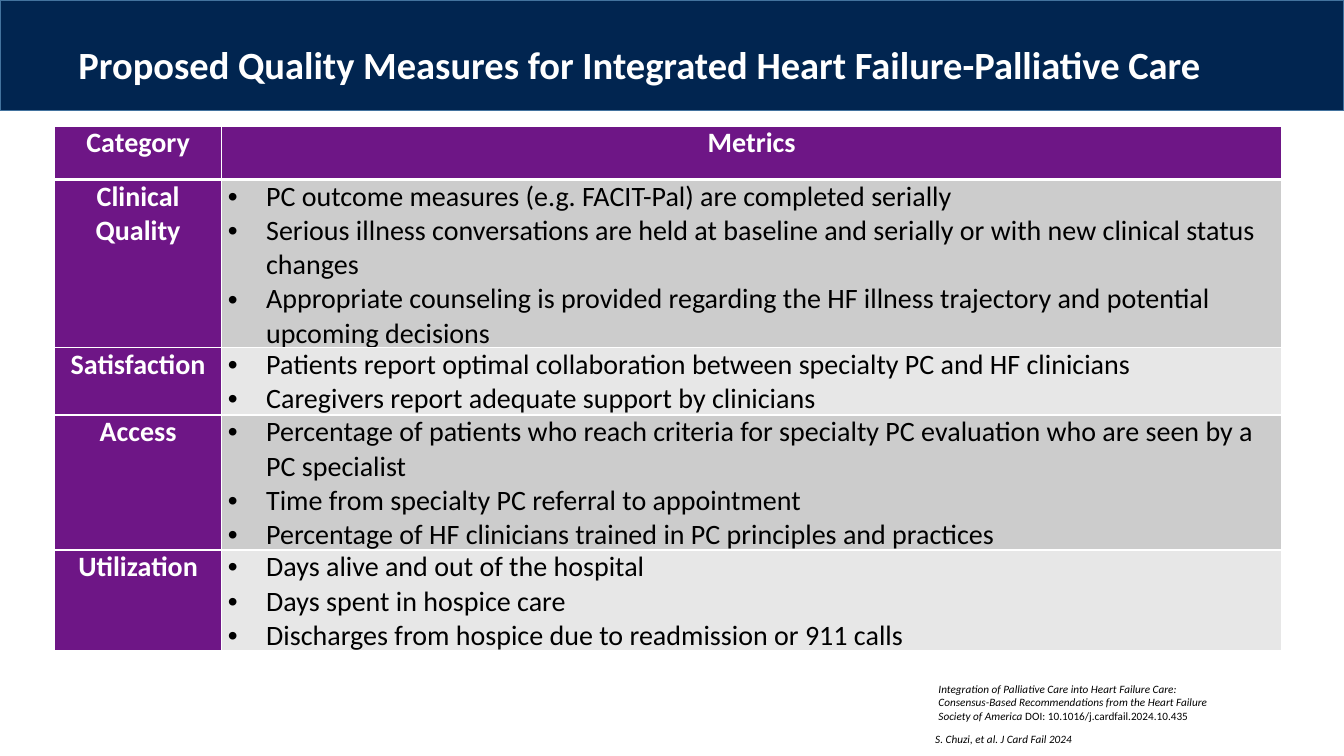
from lxml.etree import SubElement
from pptx import Presentation
from pptx.dml.color import RGBColor
from pptx.enum.shapes import MSO_SHAPE
from pptx.enum.text import MSO_ANCHOR, PP_ALIGN
from pptx.oxml.ns import qn
from pptx.util import Inches, Pt

COLORS = {
    "navy": "012550", "navy_edge": "43739E", "purple": "6E1686",
    "dark_band": "CCCCCC", "light_band": "E7E7E7",
    "white": "FFFFFF", "black": "000000",
}
MEASURES = [
    ("Clinical Quality", 1.66, [
        "PC outcome measures (e.g. FACIT-Pal) are completed serially",
        "Serious illness conversations are held at baseline and serially or with new clinical status changes",
        "Appropriate counseling is provided regarding the HF illness trajectory and potential upcoming decisions",
    ]),
    ("Satisfaction", 0.67, [
        "Patients report optimal collaboration between specialty PC and HF clinicians",
        "Caregivers report adequate support by clinicians",
    ]),
    ("Access", 1.34, [
        "Percentage of patients who reach criteria for specialty PC evaluation who are seen by a PC specialist",
        "Time from specialty PC referral to appointment",
        "Percentage of HF clinicians trained in PC principles and practices",
    ]),
    ("Utilization", 1.0, [
        "Days alive and out of the hospital",
        "Days spent in hospice care",
        "Discharges from hospice due to readmission or 911 calls",
    ]),
]


def style(paragraph, size, color, bold=False, italic=None):
    font = paragraph.font
    font.name, font.size, font.bold, font.italic = "Calibri", Pt(size), bold, italic
    font.color.rgb = RGBColor.from_string(COLORS[color])


def fill_cell(cell, lines, fill, is_header_row, is_label):
    """Write the lines, bulleted unless a label, with white borders and a fill."""
    cell.margin_left = cell.margin_right = Inches(0.06)
    cell.margin_top = cell.margin_bottom = 0
    cell.text = "\n".join(lines)
    for paragraph in cell.text_frame.paragraphs:
        if is_label:
            paragraph.alignment = PP_ALIGN.CENTER
            style(paragraph, 20, "white", bold=True)
            continue
        properties = paragraph._p.get_or_add_pPr()
        properties.set("marL", str(Inches(0.38)))
        properties.set("indent", str(-Inches(0.38)))
        SubElement(properties, qn("a:buFont"), typeface="Arial")
        SubElement(properties, qn("a:buChar"), char="•")
        style(paragraph, 20, "black")
    cell_properties = cell._tc.get_or_add_tcPr()
    for side in "LRTB":
        width = 3 if is_header_row and side == "B" else 1
        border = SubElement(cell_properties, qn(f"a:ln{side}"), w=str(Pt(width)))
        border_fill = SubElement(border, qn("a:solidFill"))
        SubElement(border_fill, qn("a:srgbClr"), val=COLORS["white"])
    cell.fill.solid()
    cell.fill.fore_color.rgb = RGBColor.from_string(COLORS[fill])


presentation = Presentation()
presentation.slide_width, presentation.slide_height = Inches(13.33), Inches(7.5)
slide = presentation.slides.add_slide(presentation.slide_layouts[6])
shapes = slide.shapes

banner = shapes.add_shape(MSO_SHAPE.RECTANGLE, 0, 0, Inches(13.33), Inches(1.1))
banner.shadow.inherit = False
banner.fill.solid()
banner.fill.fore_color.rgb = RGBColor.from_string(COLORS["navy"])
banner.line.color.rgb = RGBColor.from_string(COLORS["navy_edge"])
banner.line.width = Pt(1)

author = shapes.add_textbox(Inches(8.47), Inches(7.23), Inches(2.97), Inches(0.21)).text_frame
author.word_wrap = True
author_line = author.paragraphs[0]
author_line.text = "S. Chuzi, et al. J Card Fail 2024"
author_line.alignment = PP_ALIGN.CENTER
author_line.line_spacing = 0.9
style(author_line, 8, "black", italic=True)

citation = shapes.add_textbox(Inches(9.21), Inches(6.72), Inches(2.96), Inches(0.5)).text_frame
citation.word_wrap = True
citation_line = citation.paragraphs[0]
work = citation_line.add_run()
work.text = ("Integration of Palliative Care into Heart Failure Care: Consensus-Based "
             "Recommendations from the Heart Failure Society of America ")
work.font.italic = True
citation_line.add_run().text = "DOI: 10.1016/j.cardfail.2024.10.435"
style(citation_line, 8, "black")

title = shapes.add_textbox(Inches(0.68), Inches(0.29), Inches(11.4), Inches(0.81)).text_frame
title.word_wrap = True
title.vertical_anchor = MSO_ANCHOR.MIDDLE
title_line = title.paragraphs[0]
title_line.text = "Proposed Quality Measures for Integrated Heart Failure-Palliative Care"
title_line.line_spacing = 0.7
style(title_line, 27.5, "white", bold=True)

measures = shapes.add_table(len(MEASURES) + 1, 2, Inches(0.54), Inches(1.25),
                            Inches(12.17), Inches(5.2)).table
measures.first_row = measures.horz_banding = False
measures.columns[0].width, measures.columns[1].width = Inches(1.66), Inches(10.51)
measures.rows[0].height = Inches(0.53)
for column, heading in enumerate(["Category", "Metrics"]):
    fill_cell(measures.cell(0, column), [heading], "purple", True, True)
for row, (category, height, metrics) in enumerate(MEASURES, start=1):
    measures.rows[row].height = Inches(height)
    fill_cell(measures.cell(row, 0), [category], "purple", False, True)
    band = "dark_band" if row % 2 else "light_band"
    fill_cell(measures.cell(row, 1), metrics, band, False, False)

presentation.save("out.pptx")
